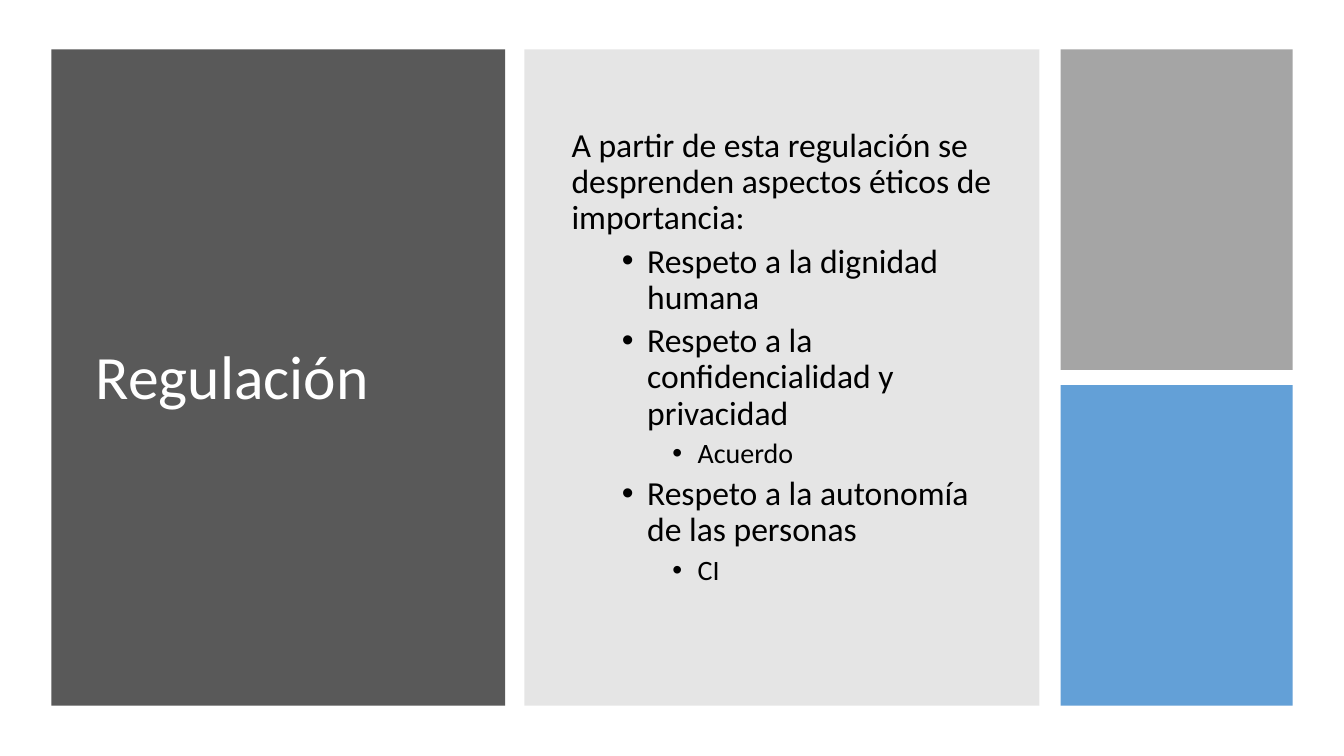
from dataclasses import dataclass

from pptx import Presentation
from pptx import util as u
from pptx.dml.color import RGBColor
from pptx.enum import shapes, text
from pptx.oxml.ns import qn
from lxml import etree


@dataclass(frozen=True)
class Theme:
    font: str = "Calibri"
    title_size: int = 44
    body_size: int = 24
    detail_size: int = 20
    white: str = "FFFFFF"
    black: str = "000000"
    dark: str = "595959"
    gray: str = "808080"
    silver: str = "A5A5A5"
    blue: str = "5B9BD5"


@dataclass(frozen=True)
class Panel:
    left: float
    top: float
    width: float
    height: float
    color: str
    opacity: int = 100


@dataclass(frozen=True)
class Item:
    wording: str
    level: int = 0


THEME = Theme()
TOP, FULL_HEIGHT, HALF_HEIGHT = 0.49, 6.51, 3.18
TEXT_TOP, TEXT_HEIGHT = 0.83, 5.87

TITLE_PANEL = Panel(0.51, TOP, 4.5, FULL_HEIGHT, THEME.dark)
OTHER_PANELS = [
    Panel(5.2, TOP, 5.11, FULL_HEIGHT, THEME.gray, 20),
    Panel(10.52, TOP, 2.3, HALF_HEIGHT, THEME.silver),
    Panel(10.52, TOP + FULL_HEIGHT - HALF_HEIGHT, 2.3, HALF_HEIGHT, THEME.blue, 95),
]
ITEMS = [
    Item("A partir de esta regulación se desprenden aspectos éticos de importancia:"),
    Item("Respeto a la dignidad humana", 1),
    Item("Respeto a la confidencialidad y privacidad", 1),
    Item("Acuerdo", 2),
    Item("Respeto a la autonomía de las personas", 1),
    Item("CI", 2),
]


def add_panel(slide, panel: Panel):
    shape = slide.shapes.add_shape(
        shapes.MSO_SHAPE.RECTANGLE,
        *(u.Inches(n) for n in (panel.left, panel.top, panel.width, panel.height)))
    shape.shadow.inherit = False
    shape.line.fill.background()
    shape.fill.solid()
    shape.fill.fore_color.rgb = RGBColor.from_string(panel.color)
    if panel.opacity < 100:
        color = shape._element.spPr.find(qn("a:solidFill"))[0]
        etree.SubElement(color, qn("a:alpha"), val=str(panel.opacity * 1000))
    return shape


def add_run(paragraph, wording: str, size: int, color: str) -> None:
    paragraph.alignment = text.PP_ALIGN.LEFT
    paragraph.line_spacing = 0.9
    run = paragraph.add_run()
    run.text = wording
    run.font.name = THEME.font
    run.font.size = u.Pt(size)
    run.font.color.rgb = RGBColor.from_string(color)


def set_frame(shape, left: float, width: float):
    shape.left, shape.top = u.Inches(left), u.Inches(TEXT_TOP)
    shape.width, shape.height = u.Inches(width), u.Inches(TEXT_HEIGHT)
    frame = shape.text_frame
    frame.word_wrap = True
    frame.auto_size = text.MSO_AUTO_SIZE.NONE
    frame.vertical_anchor = text.MSO_ANCHOR.MIDDLE
    return frame


def add_bullet(paragraph, level: int) -> None:
    properties = paragraph._p.get_or_add_pPr()
    properties.set("marL", str(u.Inches(0.25 + 0.5 * level)))
    properties.set("indent", str(u.Inches(-0.25)))
    etree.SubElement(properties, qn("a:buFont"), typeface="Arial")
    etree.SubElement(properties, qn("a:buChar"), char="•")


def add_items(slide, items: list[Item]) -> None:
    box = slide.shapes.add_textbox(0, 0, 0, 0)
    frame = set_frame(box, 5.57, 4.42)
    frame.margin_bottom = u.Inches(0.49)  # lifts the list above the centre
    for index, item in enumerate(items):
        paragraph = frame.add_paragraph() if index else frame.paragraphs[0]
        size = THEME.detail_size if item.level == 2 else THEME.body_size
        add_run(paragraph, item.wording, size, THEME.black)
        paragraph.level = item.level
        paragraph.space_before = u.Pt(5 if item.level else 10)
        if item.level:
            add_bullet(paragraph, item.level)


def main() -> None:
    presentation = Presentation()
    presentation.slide_width = u.Inches(13.33)
    presentation.slide_height = u.Inches(7.5)
    slide = presentation.slides.add_slide(presentation.slide_layouts[5])

    # Title on its dark panel
    title_panel = add_panel(slide, TITLE_PANEL)
    title = slide.shapes.title
    title_panel._element.addnext(title._element)
    frame = set_frame(title, 0.85, 3.84)
    add_run(frame.paragraphs[0], "Regulación", THEME.title_size, THEME.white)

    # Remaining panels and the list
    for panel in OTHER_PANELS:
        add_panel(slide, panel)
    add_items(slide, ITEMS)

    presentation.save("out.pptx")


if __name__ == "__main__":
    main()
